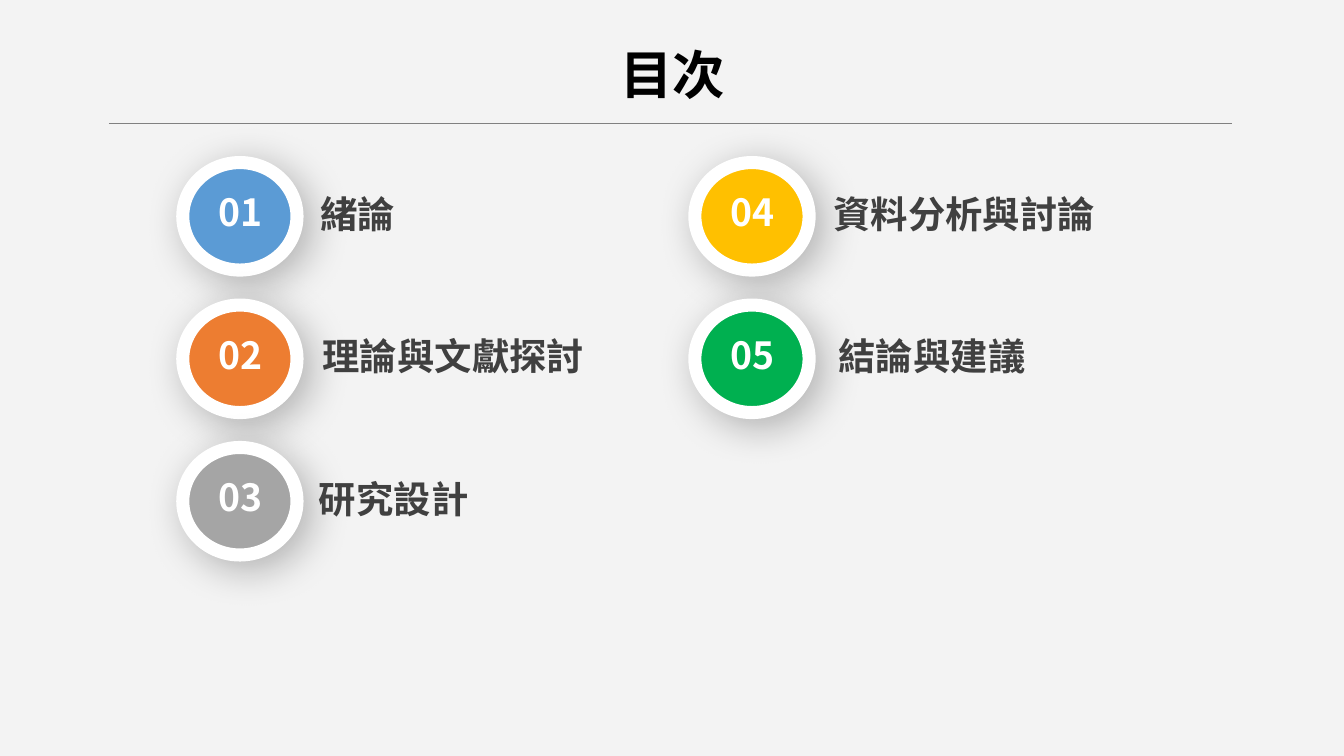
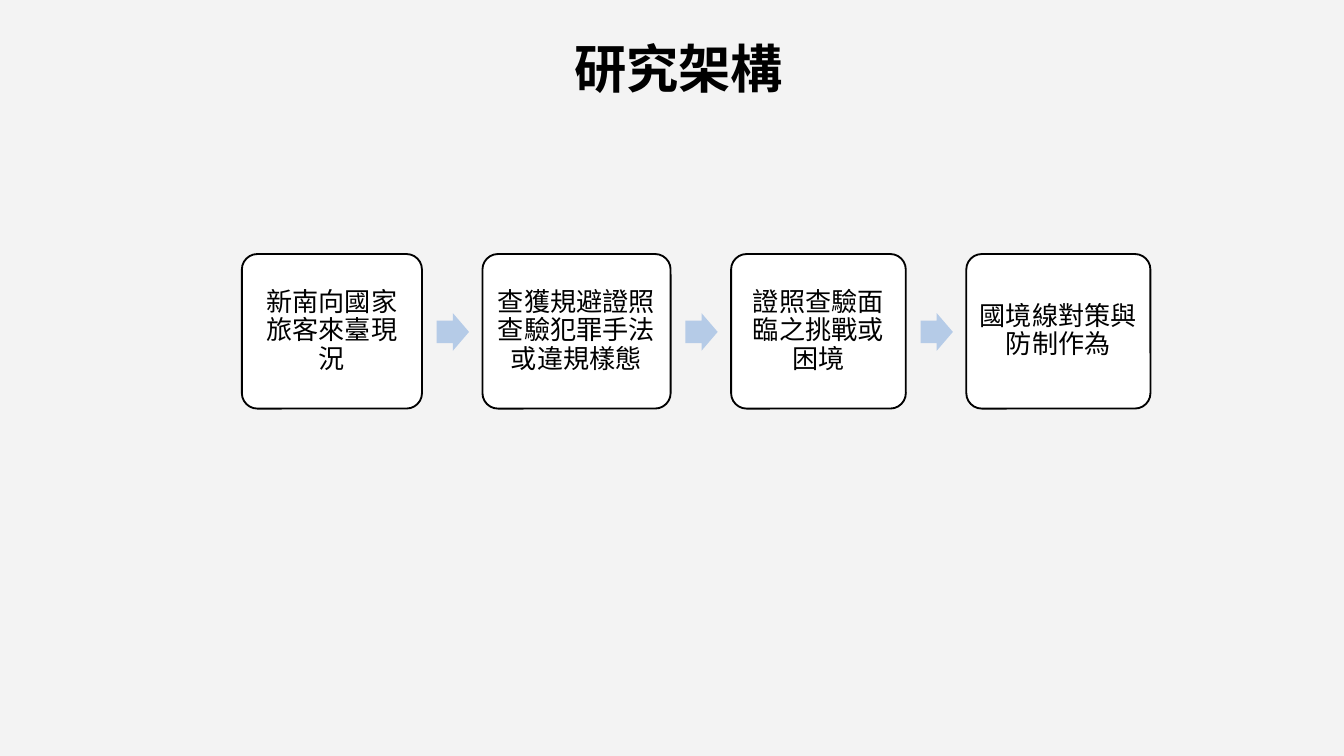
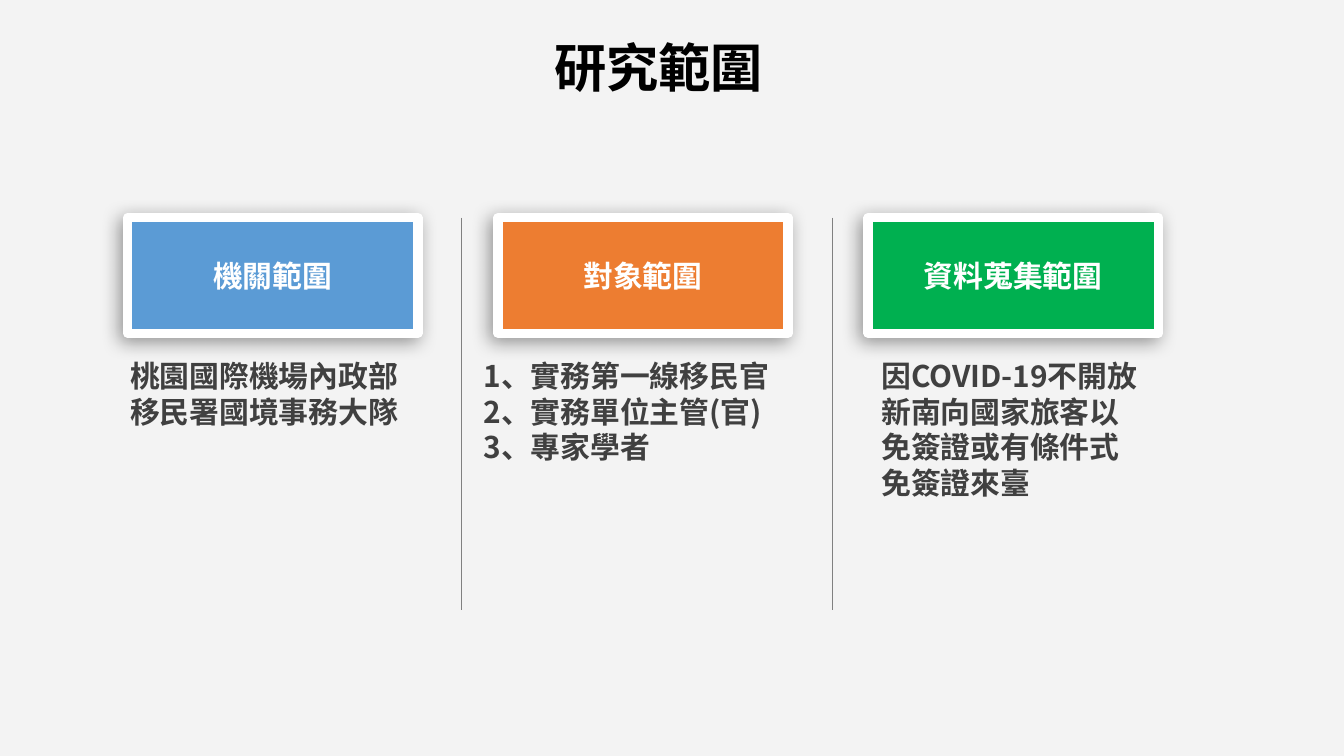
from lxml import etree
from pptx import Presentation
from pptx import util as u
from pptx.dml import color as dml
from pptx.enum import shapes, text
from pptx.oxml import ns

FONT = "Noto Sans CJK SC"
BACKGROUND, BLACK, WHITE = "F3F3F3", "000000", "FFFFFF"
DARK, RULE, ARROW = "404040", "808080", "B5CBE7"
BLUE, ORANGE, GREY, GOLD, GREEN = "5B9BD5", "ED7D31", "A5A5A5", "FFC000", "00B050"
CENTER, LEFT = text.PP_ALIGN.CENTER, text.PP_ALIGN.LEFT
TOP, MIDDLE = text.MSO_ANCHOR.TOP, text.MSO_ANCHOR.MIDDLE
TIGHT = (0.7, 0.4)
rgb = dml.RGBColor.from_string

prs = Presentation()
prs.slide_width, prs.slide_height = u.Inches(10), u.Inches(5.625)
cell = prs.slide_width / 100
fill = prs.slide_master.background.fill
fill.solid()
fill.fore_color.rgb = rgb(BACKGROUND)


def write(sp, content, size=16, color=DARK, bold=True, align=LEFT,
          anchor=TOP, insets=(1, 0.5), spacing=None):
    tf = sp.text_frame
    tf.word_wrap = True
    tf.auto_size = text.MSO_AUTO_SIZE.NONE
    tf.vertical_anchor = anchor
    tf.margin_left = tf.margin_right = int(insets[0] * cell)
    tf.margin_top = tf.margin_bottom = int(insets[1] * cell)
    for i, line in enumerate(content.split("\n")):
        p = tf.add_paragraph() if i else tf.paragraphs[0]
        p.alignment, p.line_spacing = align, spacing
        r = p.add_run()
        r.text = line
        r.font.name, r.font.size, r.font.bold = FONT, u.Pt(size), bold
        r.font.fill.solid()
        r.font.fill.fore_color.rgb = rgb(color)
        etree.SubElement(r._r.get_or_add_rPr(), ns.qn("a:ea"), typeface=FONT)


def paint(sp, color=None, line=None, width=1, shadow=None):
    if color:
        sp.fill.solid()
        sp.fill.fore_color.rgb = rgb(color)
    if line:
        sp.line.color.rgb = rgb(line)
        sp.line.width = u.Pt(width)
    else:
        sp.line.fill.background()
    effects = etree.SubElement(sp.element.spPr, ns.qn("a:effectLst"))
    if shadow:
        alpha, blur, dist, angle = shadow
        outer = etree.SubElement(effects, ns.qn("a:outerShdw"), blurRad=str(u.Pt(blur)),
                                 dist=str(u.Pt(dist)), dir=str(angle * 60000))
        tone = etree.SubElement(outer, ns.qn("a:srgbClr"), val=BLACK)
        etree.SubElement(tone, ns.qn("a:alpha"), val=str(alpha * 1000))


slides = []
for name, left, top, width, height, anchor in [
    ("目次", 37.7, 2.8, 24.7, 5.4, MIDDLE),
    ("研究架構", 24.1, 2.2, 52.8, 5.7, TOP),
    ("研究範圍", 22.6, 2.1, 52.8, 5.7, TOP),
]:
    s = prs.slides.add_slide(prs.slide_layouts[5])
    title = s.shapes.title
    title.left, title.top = int(left * cell), int(top * cell)
    title.width, title.height = int(width * cell), int(height * cell)
    write(title, name, size=28, color=BLACK, align=CENTER, anchor=anchor)
    slides.append(s)
contents, framework, scope = slides

rule = contents.shapes.add_connector(
    shapes.MSO_CONNECTOR.STRAIGHT, *(int(n * cell) for n in (8.1, 9.2, 91.7, 9.2)))
paint(rule, line=RULE, width=0.5)

chapters = [
    ("緒論", BLUE, 19.2, 14.8),
    ("理論與文獻探討", ORANGE, 23.1, 21.3),
    ("研究設計", GREY, 22.1, 14.4),
    ("資料分析與討論", GOLD, 61.1, 21.3),
    ("結論與建議", GREEN, 61.3, 16.1),
]
for i, (name, color, label_left, label_width) in enumerate(chapters):
    left = 13.6 + i // 3 * 38.1
    top = 12.1 + i % 3 * 10.6
    badge = contents.shapes.add_shape(
        shapes.MSO_SHAPE.OVAL, *(int(n * cell) for n in (left, top, 8.5, 8)))
    paint(badge, color, WHITE, 7, (28, 22, 6, 45))
    number = contents.shapes.add_textbox(
        *(int(n * cell) for n in (left + 1.1, top + 1.6, 6.4, 3.2)))
    write(number, f"{i + 1:02}", size=20, color=WHITE, align=CENTER, insets=TIGHT)
    label = contents.shapes.add_textbox(
        *(int(n * cell) for n in (label_left, top + 1.7, label_width, 4.1)))
    write(label, name, size=20, align=CENTER, insets=TIGHT)

steps = [
    ("新南向國家旅客來臺現況", 13.4),
    ("查獲規避證照查驗犯罪手法或違規樣態", 14),
    ("證照查驗面臨之挑戰或困境", 13),
    ("國境線對策與防制作為", 13.7),
]
left = 18
for i, (name, width) in enumerate(steps):
    if i:
        arrow = framework.shapes.add_shape(
            shapes.MSO_SHAPE.RIGHT_ARROW, *(int(n * cell) for n in (left - 3.4, 23.3, 2.4, 2.8)))
        arrow.adjustments[0] = 0.6
        paint(arrow, ARROW)
    step = framework.shapes.add_shape(
        shapes.MSO_SHAPE.ROUNDED_RECTANGLE, *(int(n * cell) for n in (left, 18.9, width, 11.5)))
    step.adjustments[0] = 0.1
    paint(step, WHITE, BLACK)
    write(step, name, size=14, color=BLACK, bold=False, align=CENTER,
          anchor=MIDDLE, insets=(0.6, 0.6), spacing=0.9)
    left += width + 4.5

scopes = [
    ("機關範圍", BLUE, "桃園國際機場內政部移民署國境事務大隊", 8.7, 23),
    ("對象範圍", ORANGE, "1、實務第一線移民官\n2、實務單位主管(官)\n3、專家學者", 35, 26.1),
    ("資料蒐集範圍", GREEN, "因COVID-19不開放新南向國家旅客以免簽證或有條件式免簽證來臺", 64.6, 21.6),
]
for i, (name, color, detail, detail_left, detail_width) in enumerate(scopes):
    left = 9.5 + i * 27.55
    if i:
        divider = scope.shapes.add_connector(
            shapes.MSO_CONNECTOR.STRAIGHT,
            *(int(n * cell) for n in (left - 2.7, 16.2, left - 2.7, 45.4)))
        paint(divider, line=RULE, width=0.25)
    card = scope.shapes.add_shape(
        shapes.MSO_SHAPE.RECTANGLE, *(int(n * cell) for n in (left, 16.2, 21.6, 8.6)))
    paint(card, color, WHITE, 5, (40, 10, 3, 135))
    write(card, name, color=WHITE, align=CENTER, anchor=MIDDLE, insets=TIGHT)
    body = scope.shapes.add_textbox(
        *(int(n * cell) for n in (detail_left, 26.1, detail_width, 11.8)))
    write(body, detail)

prs.save("out.pptx")
